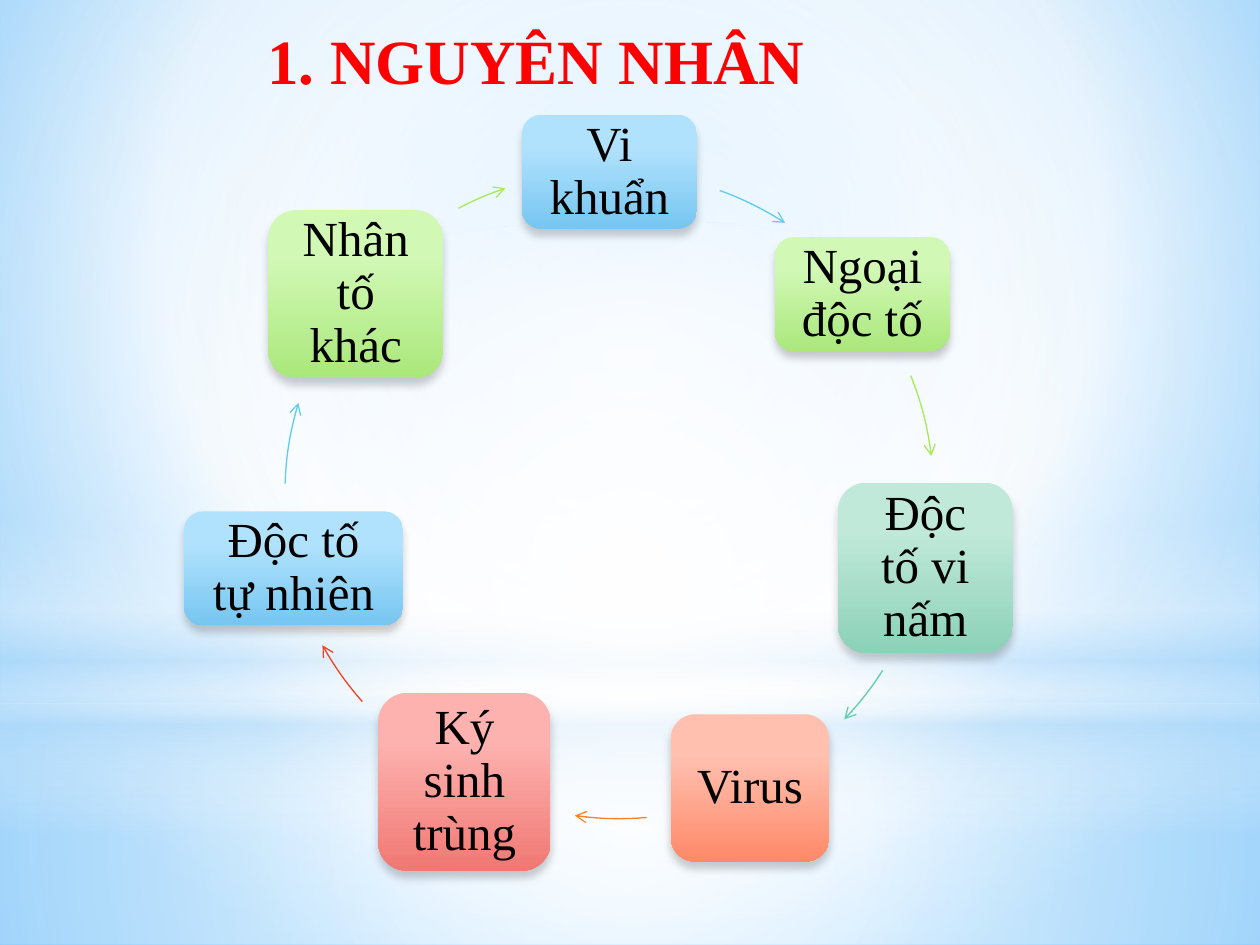
from lxml import etree
from pptx import Presentation
from pptx.dml.color import RGBColor
from pptx.enum.shapes import MSO_SHAPE
from pptx.enum.text import MSO_ANCHOR, PP_ALIGN
from pptx.oxml.ns import qn
from pptx.util import Pt

RECT, OVAL, ROUND = MSO_SHAPE.RECTANGLE, MSO_SHAPE.OVAL, MSO_SHAPE.ROUNDED_RECTANGLE
ARC = MSO_SHAPE.ARC
CENTER, MIDDLE, TOP = PP_ALIGN.CENTER, MSO_ANCHOR.MIDDLE, MSO_ANCHOR.TOP
FONT = "Times New Roman"

BLACK = RGBColor(0x00, 0x00, 0x00)
WHITE = RGBColor(0xFF, 0xFF, 0xFF)
RED = RGBColor(0xFF, 0x00, 0x00)
PALE = RGBColor(0xB4, 0xDC, 0xFA)
SKY = RGBColor(0x9E, 0xD5, 0xFF)
DEEP = RGBColor(0x5B, 0xB9, 0xFF)

BLUE = (RGBColor(0xB1, 0xE2, 0xFD), RGBColor(0x76, 0xC6, 0xF1), RGBColor(0x5E, 0xCC, 0xF3))
GREEN = (RGBColor(0xD1, 0xF8, 0xB5), RGBColor(0xAA, 0xE8, 0x7B), RGBColor(0xA7, 0xEA, 0x52))
TEAL = (RGBColor(0xC0, 0xE9, 0xDA), RGBColor(0x8C, 0xD1, 0xB8), RGBColor(0x5D, 0xCE, 0xAF))
CORAL = (RGBColor(0xFF, 0xC0, 0xAF), RGBColor(0xFF, 0x89, 0x68), RGBColor(0xFF, 0x80, 0x21))
ROSE = (RGBColor(0xFD, 0xB2, 0xAF), RGBColor(0xF0, 0x78, 0x73), RGBColor(0xF1, 0x41, 0x24))

TITLE = "1. NGUYÊN NHÂN"
BACK = [(0, SKY, 100), (60, WHITE, 100), (100, DEEP, 100)]
MID = (50, 50, 50, 50)
BANDS = [
    (RECT, (0, 401.8, 720, 138.2), [(0, WHITE, 91), (37, WHITE, 76), (100, PALE, 79)], MID),
    (RECT, (0, 0, 720, 401.8), [(0, WHITE, 89), (48, WHITE, 62), (100, PALE, 79)], MID),
    (RECT, (0, 296.6, 720, 180), [(0, WHITE, 0), (29, WHITE, 30), (45, PALE, 40),
                                  (55, WHITE, 26), (65, PALE, 60), (100, WHITE, 0)], None),
    (OVAL, (0, 126, 720, 401.8), [(0, WHITE, 100), (56, WHITE, 0)], MID),
]

HUB, RADIUS = (348.2, 283.2), 185.4
CAUSES = [
    ("Vi khuẩn", (298.3, 65.6, 100, 65), BLUE, HUB, (289.9, 302.8)),
    ("Ngoại độc tố", (442.8, 135.4, 100, 65), GREEN, HUB, (338.3, 353)),
    ("Độc tố vi nấm", (478.8, 275.8, 100, 97.2), TEAL, HUB, (32.6, 43.6)),
    ("Virus", (383.3, 408.2, 90.7, 84.2), CORAL, (354, 282.4), (85.2, 97.9)),
    ("Ký sinh trùng", (216.1, 396, 98.6, 101.5), ROSE, (346.1, 278.3), (138.6, 150.8)),
    ("Độc tố tự nhiên", (105.1, 292.2, 125.3, 65), BLUE, HUB, (182.1, 196.6)),
    ("Nhân tố khác", (153.3, 120.1, 100, 95.8), GREEN, HUB, (242.3, 251.3)),
]


def blend(owner, root, stops, focus=None):
    owner.fill.gradient()
    grad = root.find(".//" + qn("a:gradFill"))
    for child in list(grad):
        grad.remove(child)
    grad.set("rotWithShape", "1")
    group = etree.SubElement(grad, qn("a:gsLst"))
    for place, hue, alpha in stops:
        stop = etree.SubElement(group, qn("a:gs"), pos=str(place * 1000))
        tint = etree.SubElement(stop, qn("a:srgbClr"), val=str(hue))
        if alpha < 100:
            etree.SubElement(tint, qn("a:alpha"), val=str(alpha * 1000))
    if focus:
        ring = etree.SubElement(grad, qn("a:path"), path="circle")
        sides = {side: str(part * 1000) for side, part in zip("ltrb", focus)}
        etree.SubElement(ring, qn("a:fillToRect"), **sides)
    else:
        etree.SubElement(grad, qn("a:lin"), ang="5400000", scaled="0")


def write(shape, text, size=28, color=BLACK, bold=False, inset=None, anchor=MIDDLE, lead=None):
    frame = shape.text_frame
    frame.word_wrap = True
    frame.vertical_anchor = anchor
    if inset is not None:
        frame.margin_left = frame.margin_right = Pt(inset)
        frame.margin_top = frame.margin_bottom = Pt(inset)
    para = frame.paragraphs[0]
    para.alignment = CENTER
    if lead:
        para.line_spacing = lead
    run = para.add_run()
    run.text = text
    run.font.name, run.font.size, run.font.bold = FONT, Pt(size), bold
    run.font.color.rgb = color


def panel(shapes, kind, box, stops, focus=None):
    shape = shapes.add_shape(kind, *map(Pt, box))
    blend(shape, shape._element, stops, focus)
    shape.line.fill.background()
    shape.shadow.inherit = False
    return shape


def shade(shape):
    glow = etree.SubElement(shape._element.spPr.find(qn("a:effectLst")), qn("a:outerShdw"),
                            blurRad=str(Pt(5)), dist=str(Pt(4)), dir="5400000", rotWithShape="0")
    tint = etree.SubElement(glow, qn("a:srgbClr"), val=str(BLACK))
    etree.SubElement(tint, qn("a:alpha"), val="20000")


def sweep(shapes, hub, span, color):
    left, top = (Pt(mid - RADIUS) for mid in hub)
    curve = shapes.add_shape(ARC, left, top, Pt(2 * RADIUS), Pt(2 * RADIUS))
    for i, angle in enumerate(span):
        curve.adjustments[i] = angle * 0.6
    curve.fill.background()
    curve.shadow.inherit = False
    curve.line.color.rgb = color
    curve.line.width = Pt(0.75)
    etree.SubElement(curve.line._get_or_add_ln(), qn("a:tailEnd"), type="arrow")


def main():
    deck = Presentation()
    deck.slide_width, deck.slide_height = Pt(720), Pt(540)
    slide = deck.slides.add_slide(deck.slide_layouts[6])
    shapes = slide.shapes
    blend(slide.background, slide._element, BACK, (20, 10, 20, 60))
    for band in BANDS:
        panel(shapes, *band)
    for text, box, (light, dark, line), hub, span in CAUSES:
        card = panel(shapes, ROUND, box, [(28, light, 100), (100, dark, 100)])
        shade(card)
        write(card, text, inset=8.6, lead=0.9)
        sweep(shapes, hub, span, line)
    title = shapes.add_textbox(Pt(138.2), Pt(8.6), Pt(336.2), Pt(51.1))
    write(title, TITLE, size=36, color=RED, bold=True, anchor=TOP)
    deck.save("out.pptx")


if __name__ == "__main__":
    main()
